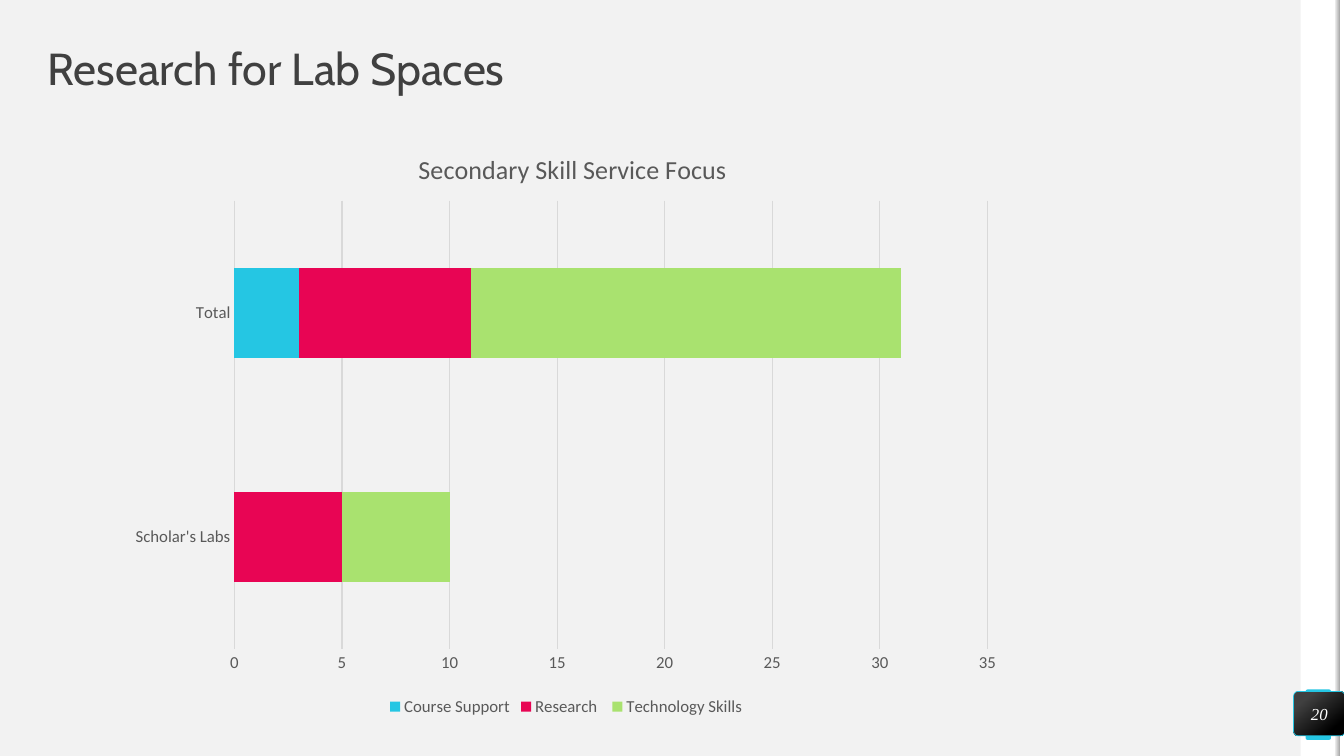
from lxml import etree
from pptx import Presentation
from pptx import util as u
from pptx.chart.data import CategoryChartData
from pptx.dml.color import RGBColor
from pptx.enum import chart as charts, shapes, text
from pptx.oxml.ns import qn

BACKGROUND = RGBColor(0xF2, 0xF2, 0xF2)
WHITE = RGBColor(0xFF, 0xFF, 0xFF)
BLACK = RGBColor(0, 0, 0)
DARK = RGBColor(0x40, 0x40, 0x40)
LABEL = RGBColor(0x59, 0x59, 0x59)
GRID = RGBColor(0xD9, 0xD9, 0xD9)
EDGE = RGBColor(0xA6, 0xA6, 0xA6)
CYAN = RGBColor(0x25, 0xC6, 0xE3)
PINK = RGBColor(0xE8, 0x05, 0x54)
GREEN = RGBColor(0xA9, 0xE2, 0x6F)

CATEGORIES = ["Scholar's Labs", "Total"]
SERIES = [
    ("Course Support", (0, 3), CYAN),
    ("Research ", (5, 8), PINK),
    ("Technology Skills", (5, 20), GREEN),
]


def style_font(font, size, color, name="Calibri", italic=False):
    font.size, font.name = u.Pt(size), name
    font.bold, font.italic = False, italic
    font.color.rgb = color


def write(frame, content, align=text.PP_ALIGN.LEFT, spacing=1.0, **font):
    """Put one middle-anchored paragraph without insets in a text frame."""
    frame.margin_left = frame.margin_right = 0
    frame.margin_top = frame.margin_bottom = 0
    frame.word_wrap = True
    frame.vertical_anchor = text.MSO_ANCHOR.MIDDLE
    paragraph = frame.paragraphs[0]
    paragraph.alignment, paragraph.line_spacing = align, spacing
    run = paragraph.add_run()
    run.text = content
    style_font(run.font, **font)


def add_block(slide, left, top, width, height, fill=None, stops=None,
              angle=0, corner=None, line=None):
    """Add a rectangle, rounded if corner is given, with solid or gradient fill."""
    kind = shapes.MSO_SHAPE.RECTANGLE if corner is None else shapes.MSO_SHAPE.ROUNDED_RECTANGLE
    block = slide.shapes.add_shape(
        kind, u.Inches(left), u.Inches(top), u.Inches(width), u.Inches(height))
    block.shadow.inherit = False
    if corner is not None:
        block.adjustments[0] = corner
    if stops:
        block.fill.gradient()
        block.fill.gradient_angle = angle
        for stop, (position, color) in zip(block.fill.gradient_stops, stops):
            stop.position, stop.color.rgb = position, color
    else:
        block.fill.solid()
        block.fill.fore_color.rgb = fill
    if line is None:
        block.line.fill.background()
    else:
        block.line.color.rgb = line
        block.line.width = u.Pt(0.5)
    return block


def add_side_band(slide, left, top, width, height):
    """White band ending in a thin shaded edge at the right of the slide."""
    edge = 0.05
    add_block(slide, left, top, width, height, fill=WHITE)
    add_block(slide, left + width, top, edge, height, fill=WHITE)
    add_block(slide, left + width - edge, top, edge, height,
              stops=[(0, BACKGROUND), (1, EDGE)])


def add_page_badge(slide, left, top, width, height, number):
    add_block(slide, left + 0.12, top - 0.02, 0.25, height + 0.06,
              fill=CYAN, corner=0.07)
    badge = add_block(slide, left, top, width, height, angle=310, corner=0.1,
                      stops=[(0.2, DARK), (0.82, BLACK)], line=CYAN)
    write(badge.text_frame, number, align=text.PP_ALIGN.CENTER, size=12,
          color=WHITE, name="Times New Roman", italic=True)


def add_title(slide, left, top, width, height, content):
    title = slide.shapes.add_textbox(
        u.Inches(left), u.Inches(top), u.Inches(width), u.Inches(height))
    write(title.text_frame, content, spacing=0.9, size=32, color=DARK, name="Cabin")


def place_in_chart(element, index, target=None, **fractions):
    """Give a chart part a manual layout in fractions of the chart."""
    for old in element.findall(qn("c:layout")):
        element.remove(old)
    layout = etree.Element(qn("c:layout"))
    element.insert(index, layout)
    manual = etree.SubElement(layout, qn("c:manualLayout"))
    settings = {"layoutTarget": target} if target else {}
    settings.update(xMode="edge", yMode="edge", **fractions)
    for tag, value in settings.items():
        etree.SubElement(manual, qn("c:" + tag)).set("val", str(value))


def style_axis(axis, line=None):
    axis.major_tick_mark = axis.minor_tick_mark = charts.XL_TICK_MARK.NONE
    style_font(axis.tick_labels.font, 12, LABEL)
    if line is None:
        axis.format.line.fill.background()
    else:
        axis.format.line.color.rgb = line
        axis.format.line.width = u.Pt(0.75)


def add_focus_chart(slide, left, top, width, height):
    data = CategoryChartData()
    data.categories = CATEGORIES
    for name, values, _ in SERIES:
        data.add_series(name, values)
    chart = slide.shapes.add_chart(
        charts.XL_CHART_TYPE.BAR_STACKED, u.Inches(left), u.Inches(top),
        u.Inches(width), u.Inches(height), data).chart
    style_font(chart.font, 10, BLACK)

    chart.has_title = True
    heading = chart.chart_title.text_frame.paragraphs[0].add_run()
    heading.text = "Secondary Skill Service Focus"
    style_font(heading.font, 18.6, LABEL)

    chart.has_legend = True
    chart.legend.position = charts.XL_LEGEND_POSITION.BOTTOM
    chart.legend.include_in_layout = False
    style_font(chart.legend.font, 12, LABEL)

    bars = chart.plots[0]
    bars.gap_width, bars.overlap, bars.vary_by_categories = 150, 100, False
    for series, (_, _, color) in zip(bars.series, SERIES):
        series.format.fill.solid()
        series.format.fill.fore_color.rgb = color

    style_axis(chart.category_axis, line=GRID)
    values = chart.value_axis
    style_axis(values)
    values.minimum_scale, values.maximum_scale, values.major_unit = 0, 35, 5
    values.has_major_gridlines = True
    values.major_gridlines.format.line.color.rgb = GRID
    values.major_gridlines.format.line.width = u.Pt(0.75)

    plot_area = chart.element.find(".//" + qn("c:plotArea"))
    place_in_chart(plot_area, 0, target="inner", x=0.13, y=0.13, w=0.84, h=0.75)
    place_in_chart(chart.element.find(".//" + qn("c:title")), 1, x=0.33, y=0.04)


def main():
    deck = Presentation()
    deck.slide_width, deck.slide_height = u.Inches(13.33), u.Inches(7.5)
    slide = deck.slides.add_slide(deck.slide_layouts[6])
    slide.background.fill.solid()
    slide.background.fill.fore_color.rgb = BACKGROUND
    add_side_band(slide, 12.9, 0, 0.39, 7.5)
    add_title(slide, 0.47, 0.47, 12.39, 0.47, "Research for Lab Spaces")
    add_page_badge(slide, 12.83, 6.86, 0.51, 0.44, "20")
    add_focus_chart(slide, 1.17, 1.22, 8.89, 5.93)
    deck.save("out.pptx")


if __name__ == "__main__":
    main()
